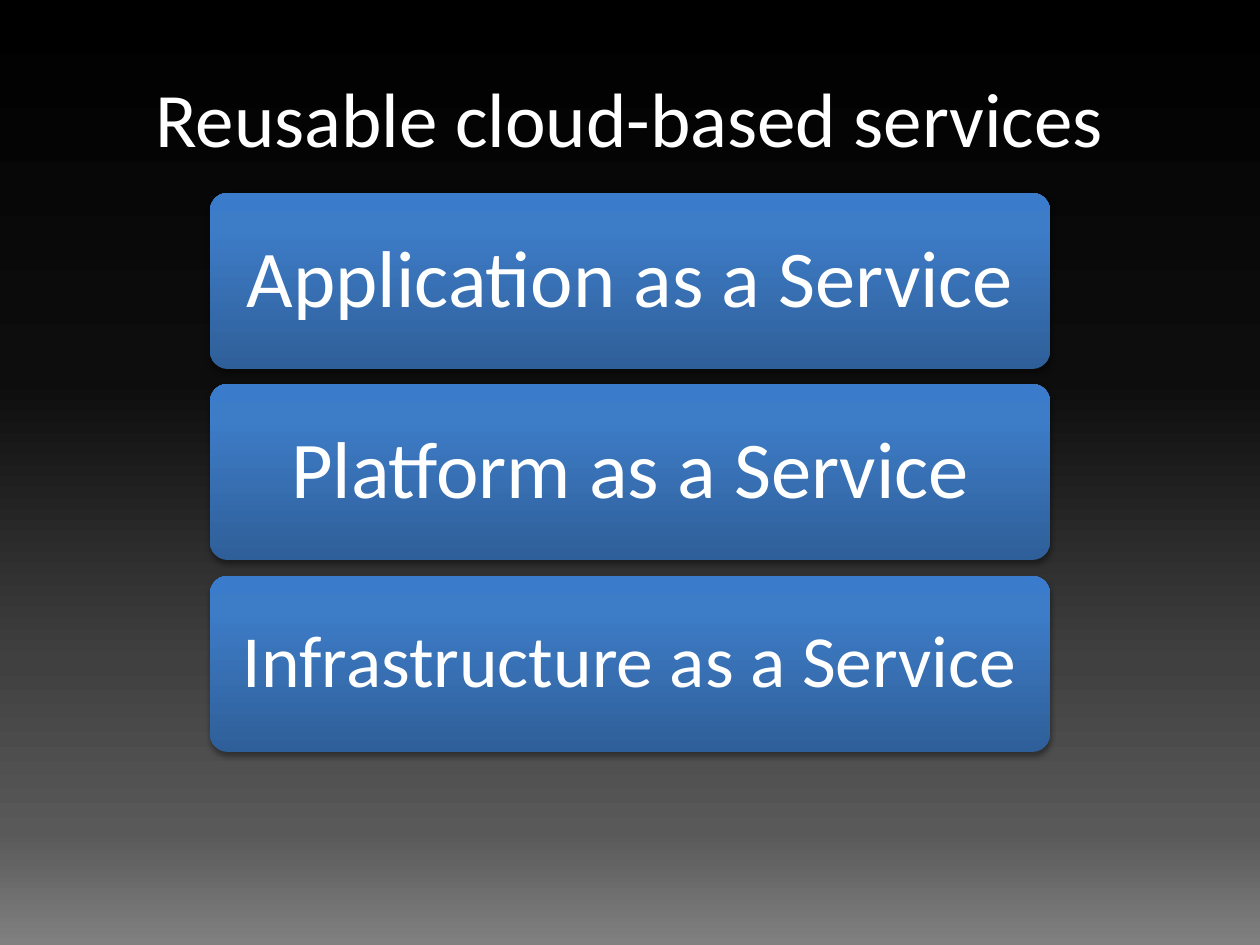
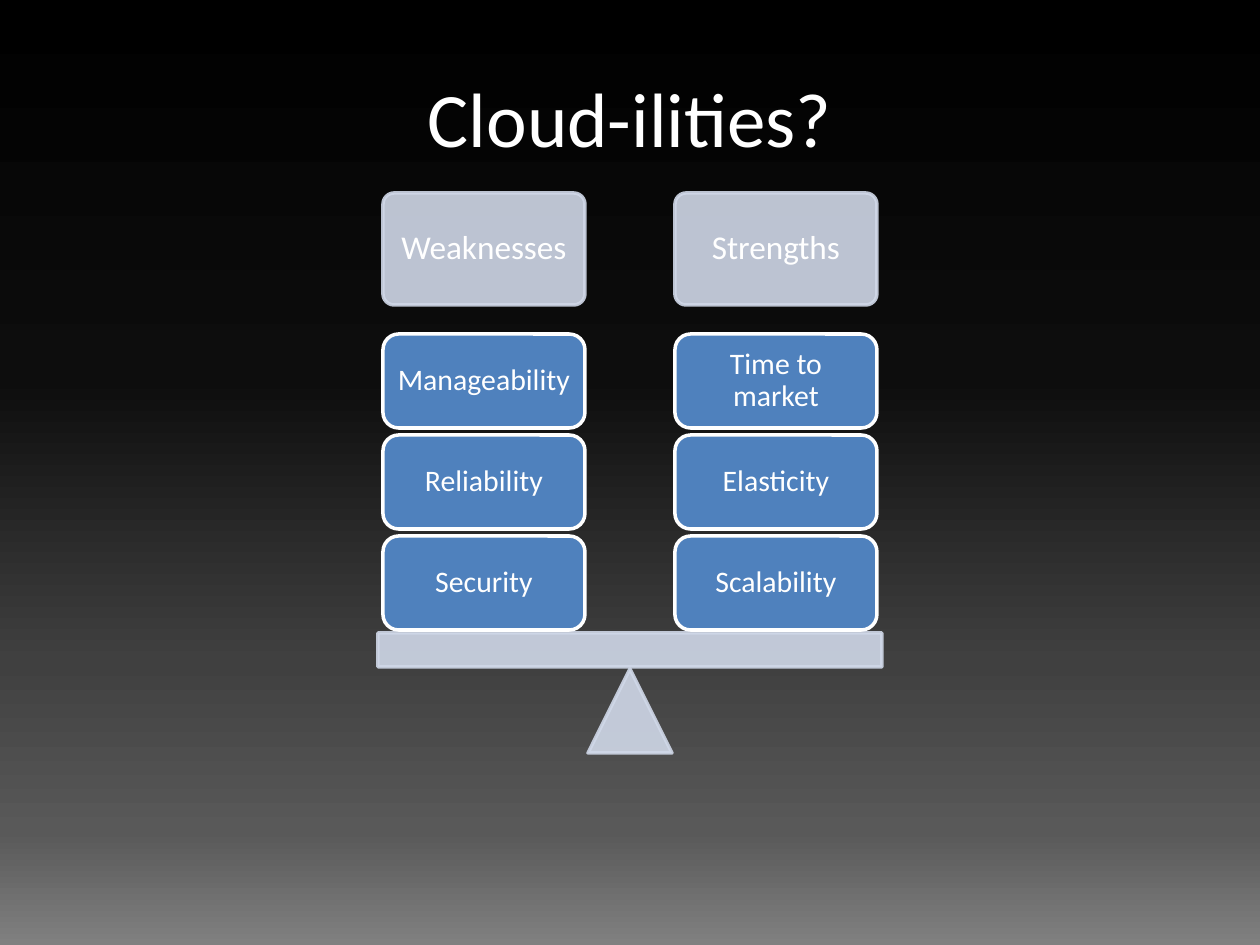
from lxml import etree
from pptx import Presentation
from pptx.dml.color import RGBColor
from pptx.enum.shapes import MSO_SHAPE
from pptx.enum.text import MSO_ANCHOR, PP_ALIGN
from pptx.oxml.ns import qn
from pptx.util import Emu, Pt

ROUNDED = MSO_SHAPE.ROUNDED_RECTANGLE
RECTANGLE = MSO_SHAPE.RECTANGLE
TRIANGLE = MSO_SHAPE.ISOSCELES_TRIANGLE
MIDDLE = MSO_ANCHOR.MIDDLE
CENTER = PP_ALIGN.CENTER

PX_PER_INCH = 126
FONT = "Calibri"
WHITE = "FFFFFF"
BLUE = "4F81BD"
PALE = "D0D8E8"
BACKGROUND_STOPS = [(0, "000000"), (40, "0D0D0D"), (70, "404040"),
                    (88, "595959"), (100, "808080")]
SERVICE_STOPS = [(0, "2F5F99"), (80, "3D7CC7"), (100, "3A7CCB")]
DOWNWARD, UPWARD = 270, 90

SERVICES = [("Application as a Service", 46, 24),
            ("Platform as a Service", 46, 24),
            ("Infrastructure as a Service", 42, 21)]
COLUMNS = [(383, "Weaknesses", ["Manageability", "Reliability", "Security"]),
           (675, "Strengths", ["Time to market", "Elasticity", "Scalability"])]


def px(length):
    return Emu(round(length * 914400 / PX_PER_INCH))


def color(value):
    return RGBColor.from_string(value)


def add_color(parent, value, opacity=100):
    node = etree.SubElement(parent, qn("a:srgbClr"), val=value)
    if opacity < 100:
        etree.SubElement(node, qn("a:alpha"), val=str(opacity * 1000))


def set_gradient(fill, owner, stops, angle):
    """Fill with the given stops; owner is the XML element holding the fill."""
    fill.gradient()
    fill.gradient_angle = angle
    stop_list = owner.find(".//" + qn("a:gsLst"))
    for stop in list(stop_list):
        stop_list.remove(stop)
    for position, value in stops:
        stop = etree.SubElement(stop_list, qn("a:gs"), pos=str(position * 1000))
        add_color(stop, value)


def add_shadow(shape):
    effects = shape._element.spPr.find(qn("a:effectLst"))
    shadow = etree.SubElement(effects, qn("a:outerShdw"), blurRad="40000",
                              dist="20000", dir="5400000", rotWithShape="0")
    add_color(shadow, "000000", 38)


def set_opacity(shape, opacity):
    """Apply one opacity to both the fill and the outline."""
    for node in shape._element.spPr.iter(qn("a:srgbClr")):
        etree.SubElement(node, qn("a:alpha"), val=str(opacity * 1000))


def write_text(shape, text, size, inset=None, line_spacing=1.0):
    frame = shape.text_frame
    frame.word_wrap = True
    frame.vertical_anchor = MIDDLE
    if inset is not None:
        frame.margin_left = frame.margin_right = px(inset)
        frame.margin_top = frame.margin_bottom = px(inset)
    paragraph = frame.paragraphs[0]
    paragraph.alignment = CENTER
    paragraph.line_spacing = line_spacing
    run = paragraph.add_run()
    run.text = text
    run.font.name = FONT
    run.font.size = Pt(size)
    run.font.color.rgb = color(WHITE)


def add_shape(slide, kind, left, top, width, height):
    shape = slide.shapes.add_shape(kind, px(left), px(top), px(width), px(height))
    shape.shadow.inherit = False
    return shape


def add_service(slide, top, text, size, inset):
    service = add_shape(slide, ROUNDED, 210, top, 840, 176)
    service.adjustments[0] = 0.1
    set_gradient(service.fill, service._element.spPr, SERVICE_STOPS, UPWARD)
    service.line.fill.background()
    add_shadow(service)
    write_text(service, text, size, inset, 0.9)


def add_outlined(slide, kind, box, fill, line):
    shape = add_shape(slide, kind, *box)
    shape.fill.solid()
    shape.fill.fore_color.rgb = color(fill)
    shape.line.color.rgb = color(line)
    shape.line.width = Pt(2)
    return shape


def add_pale(slide, kind, *box):
    shape = add_outlined(slide, kind, box, PALE, PALE)
    set_opacity(shape, 90)
    return shape


def add_column(slide, left, heading, qualities):
    header = add_pale(slide, ROUNDED, left, 193, 202, 112)
    header.adjustments[0] = 0.1
    write_text(header, heading, 19, 10, 0.9)
    for index, quality in enumerate(qualities):
        box = (left, 334 + index * 101, 202, 94)
        tile = add_outlined(slide, ROUNDED, box, BLUE, WHITE)
        write_text(tile, quality, 17, 8, 0.9)


def add_slide(presentation, title):
    slide = presentation.slides.add_slide(presentation.slide_layouts[6])
    set_gradient(slide.background.fill, slide._element, BACKGROUND_STOPS, DOWNWARD)
    box = slide.shapes.add_textbox(px(63), px(38), px(1134), px(157))
    write_text(box, title, 44)
    return slide


def build_services(presentation):
    slide = add_slide(presentation, "Reusable cloud-based services")
    for index, (text, size, inset) in enumerate(SERVICES):
        add_service(slide, 193 + index * 383 // 2, text, size, inset)


def build_balance(presentation):
    slide = add_slide(presentation, "Cloud-ilities?")
    add_pale(slide, TRIANGLE, 588, 669, 84, 84)
    add_pale(slide, RECTANGLE, 378, 633, 504, 34)
    for left, heading, qualities in COLUMNS:
        add_column(slide, left, heading, qualities)


def main():
    presentation = Presentation()
    presentation.slide_width = px(1260)
    presentation.slide_height = px(945)
    build_services(presentation)
    build_balance(presentation)
    presentation.save("out.pptx")


if __name__ == "__main__":
    main()
